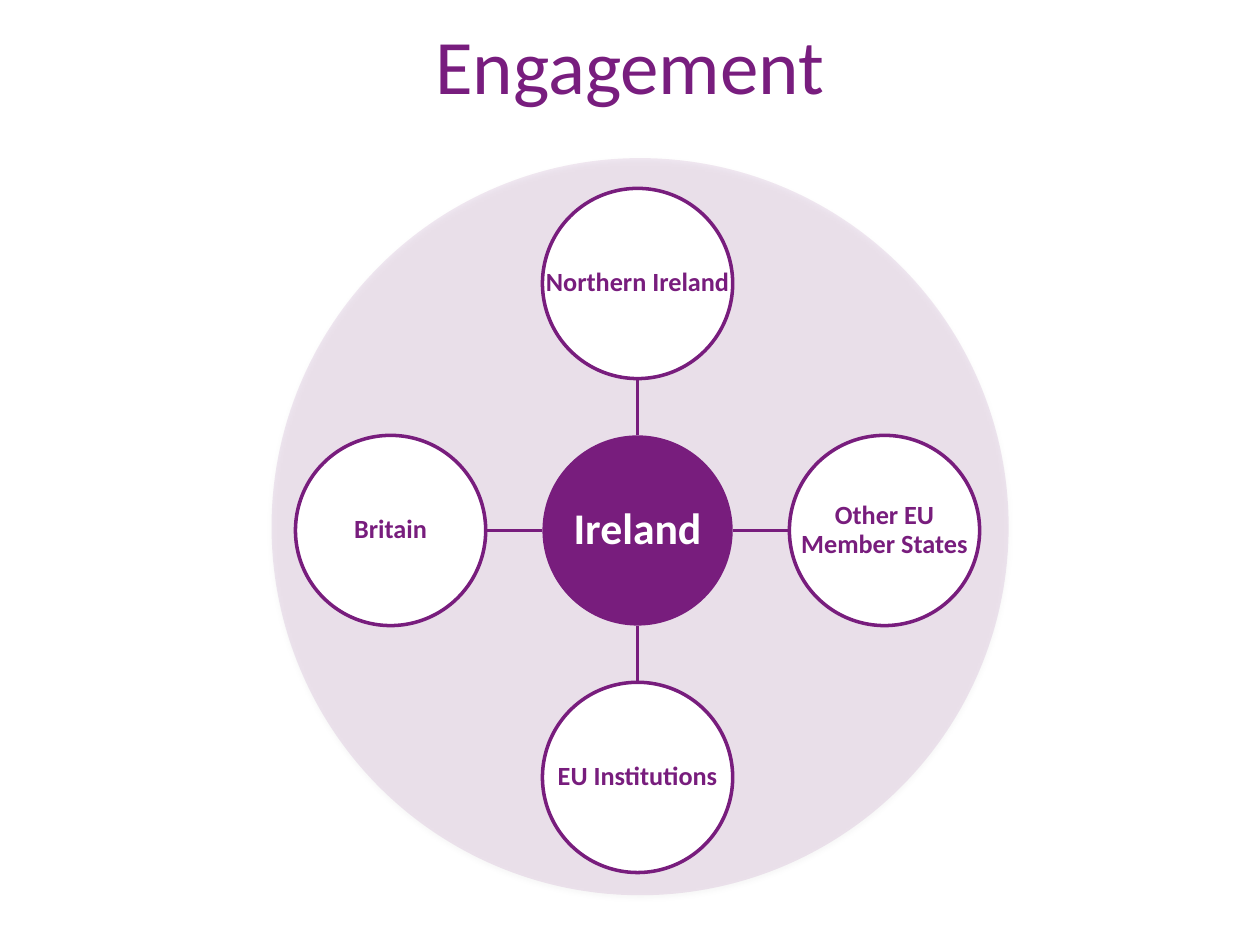
from lxml import etree
from pptx import Presentation
from pptx.dml.color import RGBColor
from pptx.enum.shapes import MSO_CONNECTOR, MSO_SHAPE
from pptx.enum.text import MSO_ANCHOR, PP_ALIGN
from pptx.oxml import parse_xml
from pptx.oxml.ns import nsdecls, qn
from pptx.util import Inches, Pt

OVAL = MSO_SHAPE.OVAL
LINE = MSO_CONNECTOR.STRAIGHT
MIDDLE = MSO_ANCHOR.MIDDLE
CENTER = PP_ALIGN.CENTER

THEME = {
    "font": "Calibri",
    "purple": RGBColor(0x78, 0x1D, 0x7D),
    "title": RGBColor(0x78, 0x1D, 0x7E),
    "white": RGBColor(0xFF, 0xFF, 0xFF),
    "title_size": Pt(44),
    "hub_size": Pt(25),
    "node_size": Pt(15),
    "stroke": Pt(2),
}


def write(box, text, size, color, bold=False, spacing=0.9, inset=None):
    frame = box.text_frame
    frame.word_wrap = True
    frame.vertical_anchor = MIDDLE
    if inset is not None:
        frame.margin_left = frame.margin_right = Inches(inset)
        frame.margin_top = frame.margin_bottom = Inches(inset)
    para = frame.paragraphs[0]
    para.alignment = CENTER
    para.line_spacing = spacing
    run = para.add_run()
    run.text = text
    run.font.name = THEME["font"]
    run.font.size = size
    run.font.bold = bold
    run.font.color.rgb = color


def circle(parent, x, y, size, fill, line=None):
    """Draw a circle centred on x, y."""
    shape = parent.add_shape(OVAL, Inches(x - size / 2), Inches(y - size / 2),
                             Inches(size), Inches(size))
    shape.shadow.inherit = False
    shape.fill.solid()
    shape.fill.fore_color.rgb = fill
    if line is None:
        shape.line.fill.background()
    else:
        shape.line.color.rgb = line
        shape.line.width = THEME["stroke"]
    return shape


deck = Presentation()
deck.slide_width, deck.slide_height = Inches(10), Inches(7.5)
slide = deck.slides.add_slide(deck.slide_layouts[5])

# Title
title = slide.shapes.title
title.left, title.top = Inches(0.5), Inches(0)
title.width, title.height = Inches(9), Inches(1.15)
write(title, "Engagement", THEME["title_size"], THEME["title"], spacing=0.8)

# Pale backdrop: see-through fill and a soft shadow below
disc = circle(slide.shapes, 5.08, 4.18, 5.85, THEME["purple"])
props = disc._element.spPr
tint = props.find(qn("a:solidFill")).find(qn("a:srgbClr"))
etree.SubElement(tint, qn("a:alpha")).set("val", "10000")
props.replace(props.find(qn("a:effectLst")), parse_xml(
    f'<a:effectLst {nsdecls("a")}>'
    '<a:outerShdw blurRad="40000" dist="23000" dir="5400000" rotWithShape="0">'
    '<a:srgbClr val="000000"><a:alpha val="35000"/></a:srgbClr>'
    '</a:outerShdw></a:effectLst>'))

# Hub with four nodes, one in each direction
HUB_X, HUB_Y = 5.06, 4.21
SIZE, REACH = 1.51, 1.96
NODES = [
    ("Northern Ireland", 0, -1),
    ("Other EU Member States", 1, 0),
    ("EU Institutions", 0, 1),
    ("Britain", -1, 0),
]
group = slide.shapes.add_group_shape().shapes
discs = [("Ireland", HUB_X, HUB_Y, THEME["purple"], None,
          THEME["hub_size"], THEME["white"], 0.02)]
for name, dx, dy in NODES:
    near, far = SIZE / 2, REACH - SIZE / 2
    spoke = group.add_connector(
        LINE, Inches(HUB_X + dx * near), Inches(HUB_Y + dy * near),
        Inches(HUB_X + dx * far), Inches(HUB_Y + dy * far))
    spoke.line.color.rgb = THEME["purple"]
    spoke.line.width = THEME["stroke"]
    etree.SubElement(spoke._element.spPr, qn("a:effectLst"))
    discs.append((name, HUB_X + dx * REACH, HUB_Y + dy * REACH, THEME["white"],
                  THEME["purple"], THEME["node_size"], THEME["purple"], 0.01))

# Labels span the full circle, wider than the text area of an oval
for name, x, y, fill, line, size, color, inset in discs:
    circle(group, x, y, SIZE, fill, line)
    label = group.add_textbox(Inches(x - SIZE / 2), Inches(y - SIZE / 2),
                              Inches(SIZE), Inches(SIZE))
    write(label, name, size, color, bold=True, inset=inset)

deck.save("out.pptx")
